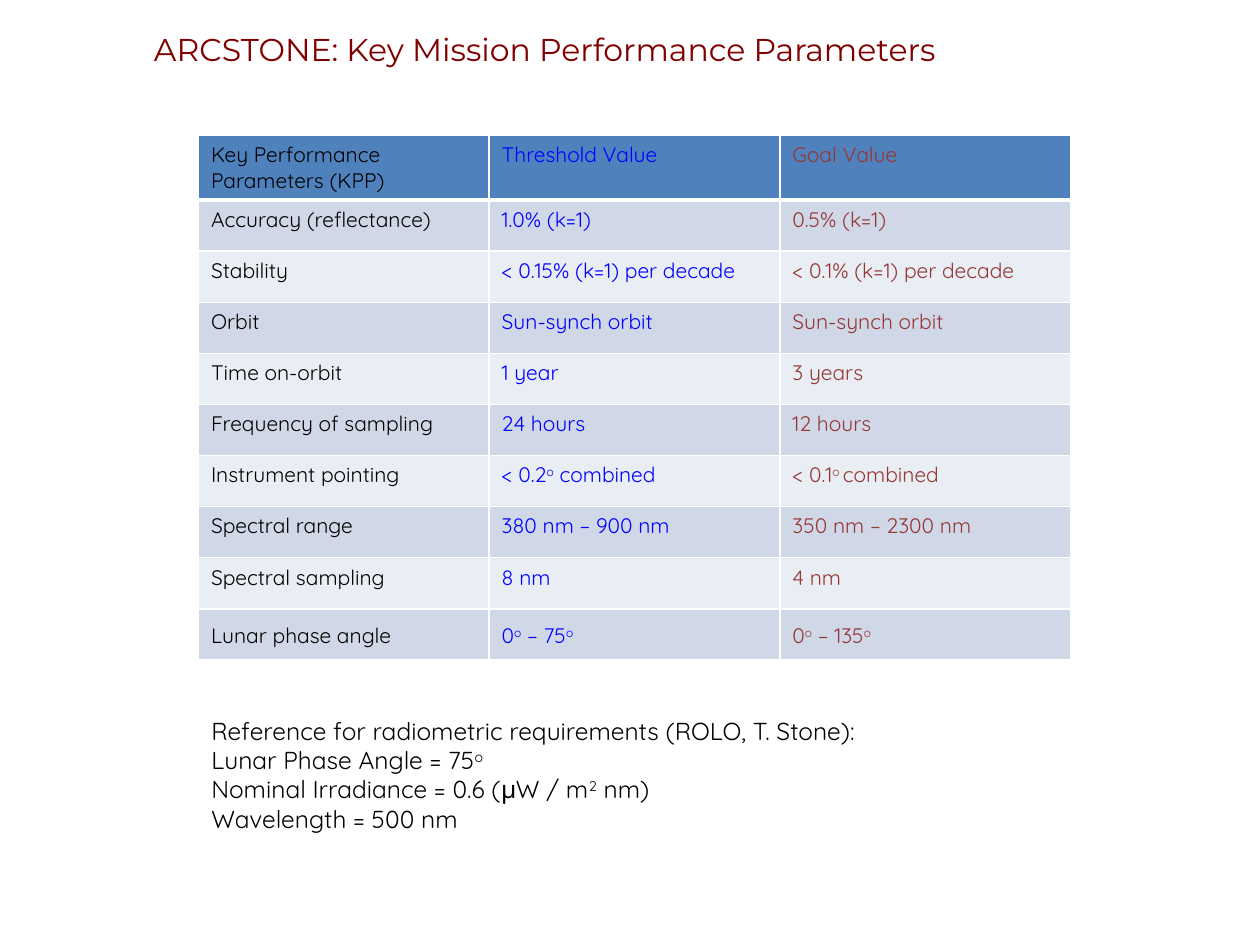
from lxml import etree
from pptx import Presentation
from pptx import util as u
from pptx.dml.color import RGBColor
from pptx.enum import text
from pptx.oxml.ns import qn

COLORS = {
    "title": "800000", "label": "000000", "threshold": "0000FF", "goal": "953735",
    "header": "4F81BD", "odd": "D0D8E8", "even": "E9EDF4", "border": "FFFFFF",
}
BODY_FONT, TITLE_FONT = "Quicksand", "Montserrat"
MARK = "^"

TITLE = "ARCSTONE: Key Mission Performance Parameters"
COLUMNS = ("label", "threshold", "goal")
PARAMETERS = [
    ("Key Performance Parameters (KPP)", "Threshold Value", "Goal Value"),
    ("Accuracy (reflectance)", "1.0% (k=1)", "0.5% (k=1)"),
    ("Stability", "< 0.15% (k=1) per decade", "< 0.1% (k=1) per decade"),
    ("Orbit", "Sun-synch orbit", "Sun-synch orbit"),
    ("Time on-orbit", "1 year", "3 years"),
    ("Frequency of sampling", "24 hours", "12 hours"),
    ("Instrument pointing", "< 0.2^o^ combined", "< 0.1^o ^combined"),
    ("Spectral range", "380 nm – 900 nm", "350 nm – 2300 nm"),
    ("Spectral sampling", "8 nm", "4 nm"),
    ("Lunar phase angle", "0^o^ – 75^o", "0^o^ – 135^o"),
]
REFERENCE = [
    "Reference for radiometric requirements (ROLO, T. Stone):",
    "Lunar Phase Angle = 75^o",
    "Nominal Irradiance = 0.6 (μW / m^2^ nm)",
    "Wavelength = 500 nm",
]


def add_runs(paragraph, marked, size, font, color):
    for i, part in enumerate(marked.split(MARK)):
        if not part:
            continue
        run = paragraph.add_run()
        run.text = part
        run.font.size = u.Pt(size)
        run.font.name = font
        run.font.color.rgb = RGBColor.from_string(COLORS[color])
        if i % 2:
            run.font._element.set("baseline", "30000")


def add_borders(cell, bottom):
    props = cell._tc.get_or_add_tcPr()
    for i, (side, width) in enumerate((("L", 1), ("R", 1), ("T", 1), ("B", bottom))):
        line = etree.Element(qn(f"a:ln{side}"), w=str(u.Pt(width)))
        fill = etree.SubElement(line, qn("a:solidFill"))
        etree.SubElement(fill, qn("a:srgbClr"), val=COLORS["border"])
        props.insert(i, line)


def add_text(slide, lines, place, size, font, color, wrap, align):
    box = slide.shapes.add_textbox(*map(u.Cm, place))
    frame = box.text_frame
    frame.word_wrap = wrap
    frame.auto_size = text.MSO_AUTO_SIZE.SHAPE_TO_FIT_TEXT
    for i, line in enumerate(lines):
        paragraph = frame.add_paragraph() if i else frame.paragraphs[0]
        paragraph.alignment = align
        add_runs(paragraph, line, size, font, color)


def add_parameters(slide):
    row_height, column_width = 1.03, 5.86
    table = slide.shapes.add_table(
        len(PARAMETERS), len(COLUMNS), u.Cm(4), u.Cm(2.72),
        u.Cm(column_width * len(COLUMNS)), u.Cm(row_height * len(PARAMETERS))).table
    for column in table.columns:
        column.width = u.Cm(column_width)
    for r, values in enumerate(PARAMETERS):
        table.rows[r].height = u.Cm(row_height)
        band = "header" if r == 0 else "odd" if r % 2 else "even"
        for c, value in enumerate(values):
            cell = table.cell(r, c)
            cell.fill.solid()
            cell.fill.fore_color.rgb = RGBColor.from_string(COLORS[band])
            add_borders(cell, 1 if r else 3)
            paragraph = cell.text_frame.paragraphs[0]
            if r == len(PARAMETERS) - 1:
                paragraph.line_spacing = 1.3
            add_runs(paragraph, value, 12, BODY_FONT, COLUMNS[c])


def main():
    deck = Presentation()
    deck.slide_width, deck.slide_height = u.Cm(25.4), u.Cm(19.05)
    slide = deck.slides.add_slide(deck.slide_layouts[6])
    add_parameters(slide)
    add_text(slide, REFERENCE, (4.01, 14.3, 17.7, 2.64), 14, BODY_FONT, "label",
             True, text.PP_ALIGN.LEFT)
    add_text(slide, [TITLE], (1.93, 0.48, 18.11, 1.02), 18, TITLE_FONT, "title",
             False, text.PP_ALIGN.CENTER)
    deck.save("out.pptx")


if __name__ == "__main__":
    main()
